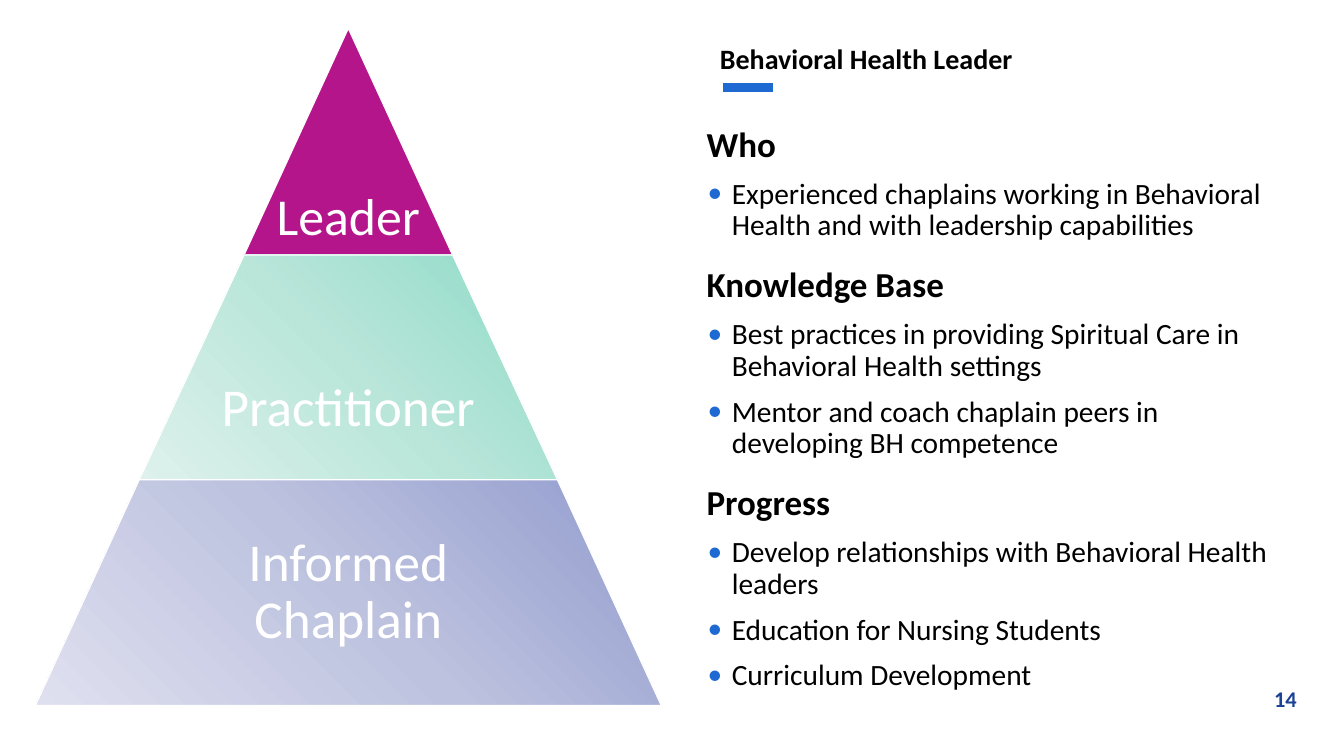
from dataclasses import dataclass

from lxml.etree import SubElement
from pptx import Presentation
from pptx.dml.color import RGBColor
from pptx.enum.shapes import MSO_CONNECTOR
from pptx.enum.text import MSO_ANCHOR, PP_ALIGN
from pptx.oxml.ns import qn
from pptx.util import Emu, Pt

PX = 9144
FONT = "Calibri"
BLACK = "000000"
WHITE = "FFFFFF"
BLUE = "1E69D2"
NAVY = "1B4297"


@dataclass
class Level:
    label: str
    colors: tuple[str, ...]
    size: int
    side_inset: int
    bottom_inset: int


@dataclass
class Section:
    heading: str
    bullets: tuple[str, ...]


LEVELS = (
    Level("Leader", ("B5158A",), 37, 5, 8),
    Level("Practitioner", ("8DDAC7", "BAE6DA", "DEF1EC"), 38, 78, 41),
    Level("Informed Chaplain", ("919BCE", "BDC2DF", "DFE0EF"), 38, 114, 55),
)
SECTIONS = (
    Section("Who", (
        "Experienced chaplains working in Behavioral Health and with leadership capabilities",
    )),
    Section("Knowledge Base", (
        "Best practices in providing Spiritual Care in Behavioral Health settings",
        "Mentor and coach chaplain peers in developing BH competence",
    )),
    Section("Progress", (
        "Develop relationships with Behavioral Health leaders",
        "Education for Nursing Students",
        "Curriculum Development",
    )),
)

PYRAMID_LEFT = 35
PYRAMID_TOP = 29
PYRAMID_WIDTH = 621
PYRAMID_HEIGHT = 671


def px(value: int) -> Emu:
    return Emu(value * PX)


def rgb(color: str) -> RGBColor:
    return RGBColor.from_string(color)


def set_frame(frame, anchor=MSO_ANCHOR.TOP, side: int = 10, bottom: int = 5) -> None:
    frame.word_wrap = True
    frame.vertical_anchor = anchor
    frame.margin_left = frame.margin_right = px(side)
    frame.margin_top = px(5)
    frame.margin_bottom = px(bottom)


def add_bullet(paragraph) -> None:
    properties = paragraph._p.get_or_add_pPr()
    properties.set("marL", str(px(25)))
    properties.set("indent", str(px(-24)))
    bullet_color = SubElement(properties, qn("a:buClr"))
    SubElement(bullet_color, qn("a:srgbClr")).set("val", BLUE)
    SubElement(properties, qn("a:buFont")).set("typeface", FONT)
    SubElement(properties, qn("a:buChar")).set("char", "•")


def write(frame, text: str, *, size: int, color: str = BLACK, bold: bool = False,
          align=PP_ALIGN.LEFT, before: int = 0, spacing: float = 0.9,
          bullet: bool = False) -> None:
    paragraph = frame.paragraphs[0] if not frame.text else frame.add_paragraph()
    paragraph.alignment = align
    paragraph.line_spacing = spacing
    paragraph.space_before = Pt(before)
    if bullet:
        add_bullet(paragraph)
    run = paragraph.add_run()
    run.text = text
    run.font.name = FONT
    run.font.size = Pt(size)
    run.font.bold = bold
    run.font.color.rgb = rgb(color)


def paint(shape, colors: tuple[str, ...]) -> None:
    if len(colors) == 1:
        shape.fill.solid()
        shape.fill.fore_color.rgb = rgb(colors[0])
        return
    shape.fill.gradient()
    shape.fill.gradient_angle = 225
    stops = shape._element.spPr.find(qn("a:gradFill")).find(qn("a:gsLst"))
    for stop in list(stops):
        stops.remove(stop)
    for index, color in enumerate(colors):
        stop = SubElement(stops, qn("a:gs"))
        stop.set("pos", str(100000 * index // (len(colors) - 1)))
        SubElement(stop, qn("a:srgbClr")).set("val", color)


def pyramid_edge(index: int) -> tuple[int, int, int]:
    count = len(LEVELS)
    inset = PYRAMID_WIDTH * (count - index) // (2 * count)
    y = PYRAMID_TOP + round(PYRAMID_HEIGHT * index / count)
    return PYRAMID_LEFT + inset, PYRAMID_LEFT + PYRAMID_WIDTH - inset, y


def add_level(slide, index: int, level: Level) -> None:
    top_left, top_right, top = pyramid_edge(index)
    bottom_left, bottom_right, bottom = pyramid_edge(index + 1)
    builder = slide.shapes.build_freeform(bottom_left, bottom, scale=PX)
    builder.add_line_segments(
        [(top_left, top), (top_right, top), (bottom_right, bottom)], close=True)
    shape = builder.convert_to_shape()
    shape.shadow.inherit = False
    paint(shape, level.colors)
    shape.line.color.rgb = rgb(WHITE)
    shape.line.width = Pt(1)
    set_frame(shape.text_frame, MSO_ANCHOR.BOTTOM, level.side_inset, level.bottom_inset)
    write(shape.text_frame, level.label, size=level.size, color=WHITE,
          align=PP_ALIGN.CENTER)


def add_title(slide, text: str) -> None:
    title = slide.shapes.title
    title.left, title.top, title.width, title.height = px(704), px(40), px(579), px(57)
    set_frame(title.text_frame)
    write(title.text_frame, text, size=20, bold=True)


def add_accent(slide) -> None:
    accent = slide.shapes.add_connector(
        MSO_CONNECTOR.STRAIGHT, px(717), px(87), px(767), px(87))
    accent.line.color.rgb = rgb(BLUE)
    accent.line.width = Pt(6)
    SubElement(accent._element.spPr, qn("a:effectLst"))


def add_text_box(slide, left: int, top: int, width: int, height: int):
    frame = slide.shapes.add_textbox(px(left), px(top), px(width), px(height)).text_frame
    set_frame(frame)
    return frame


def add_sections(slide) -> None:
    frame = add_text_box(slide, 691, 121, 592, 579)
    for index, section in enumerate(SECTIONS):
        write(frame, section.heading, size=25, bold=True, before=18 if index else 0)
        for bullet in section.bullets:
            write(frame, bullet, size=21, before=10, bullet=True)


def main() -> None:
    presentation = Presentation()
    presentation.slide_width = px(1333)
    presentation.slide_height = px(750)
    slide = presentation.slides.add_slide(presentation.slide_layouts[5])
    add_title(slide, "Behavioral Health Leader")
    add_accent(slide)
    for index, level in enumerate(LEVELS):
        add_level(slide, index, level)
    add_sections(slide)
    number_frame = add_text_box(slide, 1223, 675, 73, 37)
    write(number_frame, "14", size=16, color=NAVY, bold=True,
          align=PP_ALIGN.RIGHT, spacing=1.0)
    presentation.save("out.pptx")


if __name__ == "__main__":
    main()
